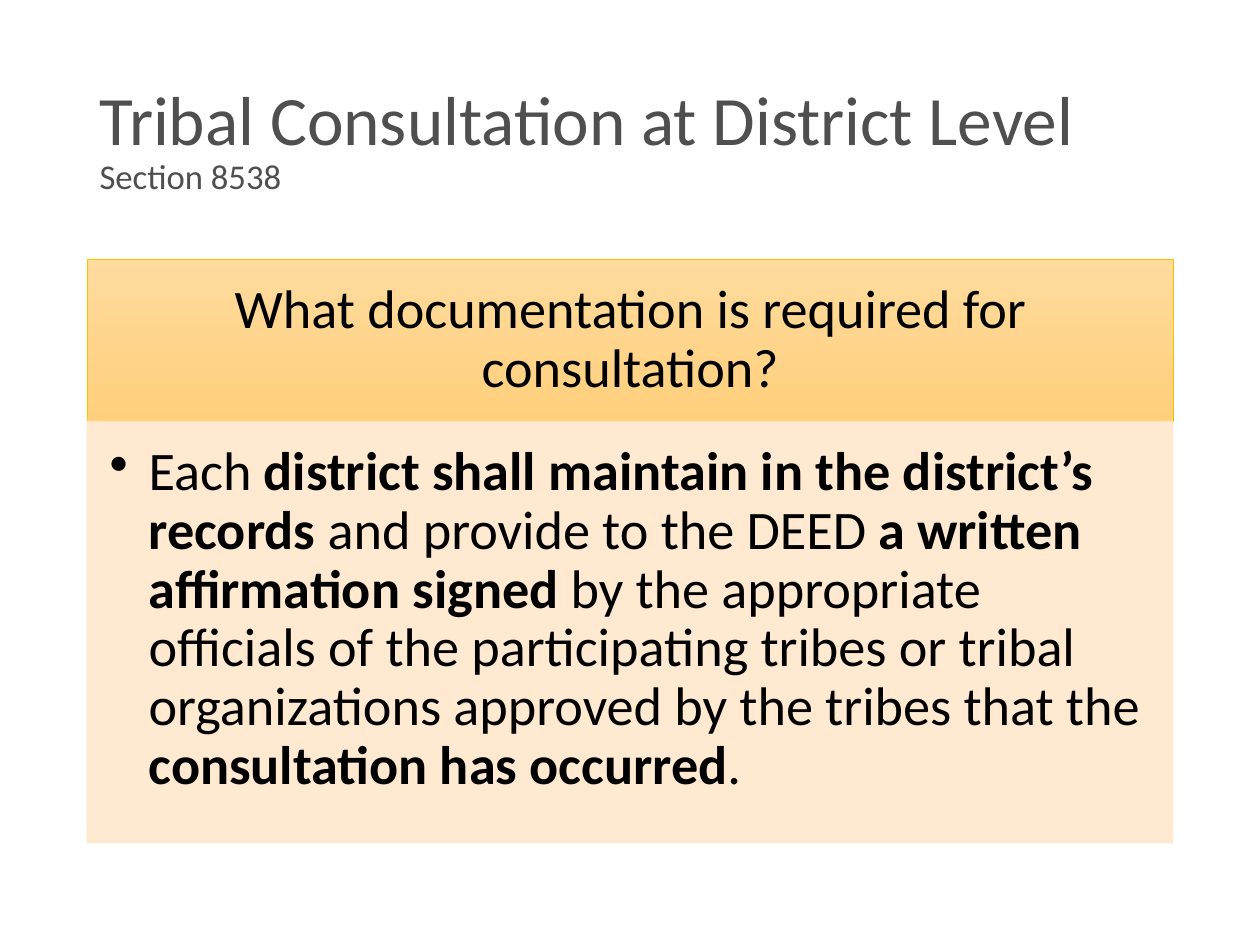
from pptx import Presentation
from pptx.dml.color import RGBColor as RGB
from pptx.enum.shapes import MSO_SHAPE as SHAPE
from pptx.enum.text import MSO_ANCHOR as ANCHOR, MSO_AUTO_SIZE as FIT, PP_ALIGN as ALIGN
from pptx.oxml.ns import qn
from pptx.oxml.xmlchemy import OxmlElement as Node
from pptx.util import Inches, Pt

COLORS = {
    "title": "4F4F4F",
    "text": "000000",
    "top": "FFDB9E",
    "base": "FFD07C",
    "edge": "FFC000",
    "body": "FFE8CC",
}
LEFT, WIDTH = 0.069, 0.862


def tint(name):
    return RGB.from_string(COLORS[name])


def write(par, text, size=31, color="text", bold=False, font="Calibri"):
    run = par.add_run()
    run.text = text
    run.font.name, run.font.size, run.font.bold = font, Pt(size), bold
    run.font.color.rgb = tint(color)


class Deck:
    def __init__(self, wide, high):
        self.prs = Presentation()
        self.prs.slide_width, self.prs.slide_height = Inches(wide), Inches(high)
        self.slide = self.prs.slides.add_slide(self.prs.slide_layouts[5])

    def span(self, top, high):
        wide, tall = self.prs.slide_width, self.prs.slide_height
        return [int(n) for n in (LEFT * wide, top * tall, WIDTH * wide, high * tall)]

    def frame(self, shape, pads, anchor, align):
        frame = shape.text_frame
        frame.word_wrap, frame.auto_size = True, FIT.NONE
        frame.vertical_anchor = anchor
        (frame.margin_left, frame.margin_top,
         frame.margin_right, frame.margin_bottom) = [Inches(n) for n in pads]
        par = frame.paragraphs[0]
        par.alignment, par.line_spacing = align, 0.9
        return par

    def title(self, top, high, main, sub):
        shape = self.slide.shapes.title
        shape.left, shape.top, shape.width, shape.height = self.span(top, high)
        par = self.frame(shape, (0.1, 0.05, 0.1, 0.05), ANCHOR.MIDDLE, ALIGN.LEFT)
        write(par, main, size=39.6, color="title")
        par.add_line_break()
        write(par, sub, size=19.8, color="title")

    def panel(self, top, high, edge):
        shape = self.slide.shapes.add_shape(SHAPE.RECTANGLE, *self.span(top, high))
        shape.shadow.inherit = False
        shape.line.color.rgb, shape.line.width = tint(edge), Pt(0.5)
        return shape

    def header(self, top, high, text):
        shape = self.panel(top, high, "edge")
        shape.fill.gradient()
        shape.fill.gradient_angle = 270
        for stop, name in zip(shape.fill.gradient_stops, ("top", "base")):
            stop.color.rgb = tint(name)
        par = self.frame(shape, (0.24, 0.14, 0.24, 0.14), ANCHOR.MIDDLE, ALIGN.CENTER)
        write(par, text)

    def body(self, top, high, parts):
        shape = self.panel(top, high, "body")
        shape.fill.solid()
        shape.fill.fore_color.rgb = tint("body")
        for color in shape.element.spPr.iter(qn("a:srgbClr")):
            alpha = Node("a:alpha")
            alpha.set("val", "90000")
            color.append(alpha)
        par = self.frame(shape, (0.18, 0.18, 0.24, 0.27), ANCHOR.TOP, ALIGN.LEFT)
        self.bullet(par, 0.31)
        for text, bold in parts:
            write(par, text, bold=bold)

    def bullet(self, par, indent):
        props = par._p.get_or_add_pPr()
        props.set("marL", str(Inches(indent)))
        props.set("indent", str(-Inches(indent)))
        mark = Node("a:buChar")
        mark.set("char", "•")
        props.append(mark)


def main():
    deck = Deck(10, 7.5)
    deck.title(0.053, 0.193, "Tribal Consultation at District Level", "Section 8538")
    deck.header(0.275, 0.171, "What documentation is required for consultation?")
    deck.body(0.446, 0.446, [
        ("Each ", False),
        ("district shall maintain in the district’s records", True),
        (" and provide to the DEED ", False),
        ("a written affirmation signed ", True),
        ("by the appropriate officials of the participating tribes or tribal "
         "organizations approved by the tribes that the ", False),
        ("consultation has occurred", True),
        (".", False),
    ])
    deck.prs.save("out.pptx")


if __name__ == "__main__":
    main()
